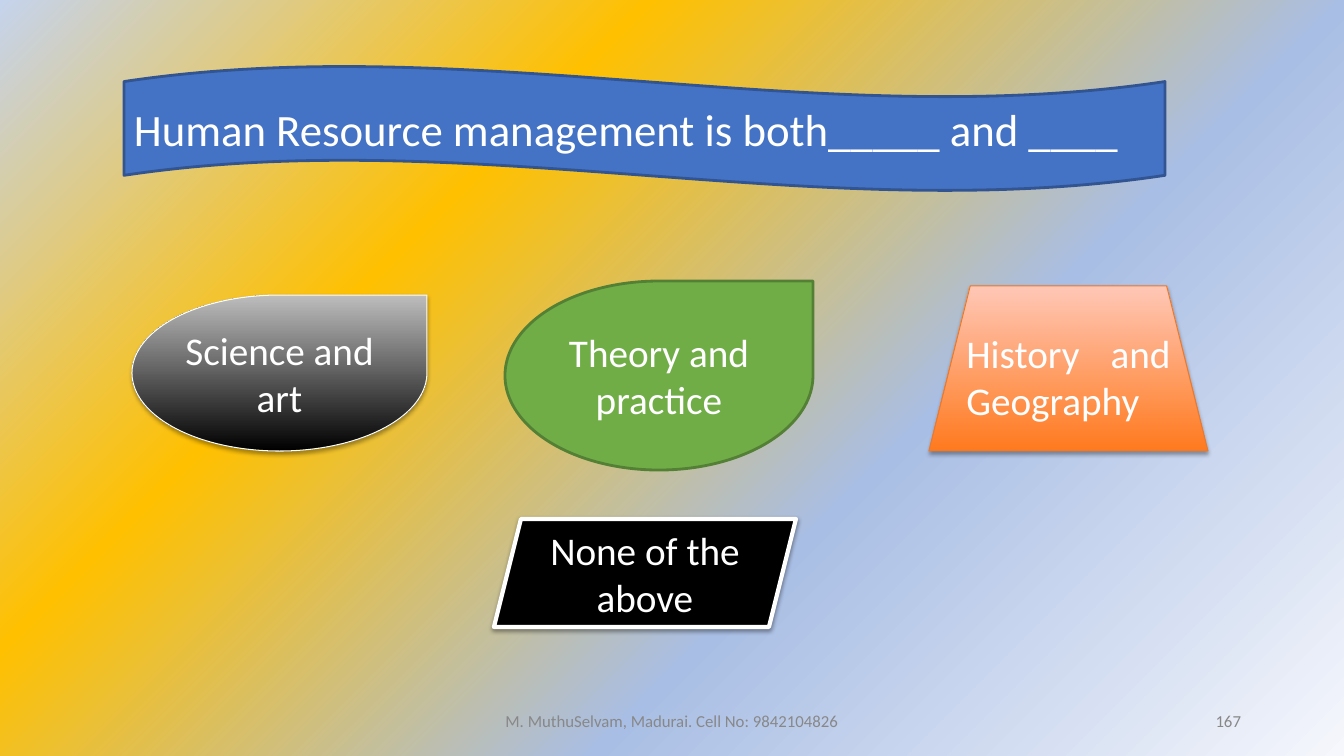
from lxml.etree import SubElement
from pptx import Presentation
from pptx.dml.color import RGBColor
from pptx.enum.shapes import MSO_SHAPE as Shape
from pptx.enum.text import MSO_ANCHOR as Anchor, PP_ALIGN as Align
from pptx.oxml.ns import qn
from pptx.util import Emu, Pt

EMU_PER_PX = 12192000 / 1344
FONT = "Calibri"
WHITE, BLACK, GREY = "FFFFFF", "000000", "888888"
BACKGROUND_STOPS = [(0, "F5F7FC"), (36, "A9BEE4"), (69, "FFC000"), (100, "C5D3ED")]


def px(length):
    """Turn pixels into EMU."""
    return Emu(round(length * EMU_PER_PX))


def color(hex_code):
    """Turn a hex string into a colour."""
    return RGBColor.from_string(hex_code)


def add_node(parent, tag, **attributes):
    """Append a drawing element with the given attributes."""
    return SubElement(parent, qn(tag), {key: str(value) for key, value in attributes.items()})


def set_gradient(fill, holder, stops):
    """Give a fill its gradient stops and return the bare gradient element."""
    fill.gradient()
    gradient = next(holder.iter(qn("a:gradFill")))
    for child in list(gradient):
        gradient.remove(child)
    stop_list = add_node(gradient, "a:gsLst")
    for position, hex_code in stops:
        stop = add_node(stop_list, "a:gs", pos=position * 1000)
        add_node(stop, "a:srgbClr", val=hex_code)
    return gradient


def paint_background(slide):
    """Spread the background gradient out from the bottom right corner."""
    background = slide.background
    gradient = set_gradient(background.fill, slide.element, BACKGROUND_STOPS)
    path_node = add_node(gradient, "a:path", path="circle")
    add_node(path_node, "a:fillToRect", l=100000, t=100000)
    add_node(gradient, "a:tileRect", r=-100000, b=-100000)


def add_shadow(shape, opacity, distance):
    """Drop a soft black shadow below a shape."""
    effects = shape.element.spPr.find(qn("a:effectLst"))
    shadow = add_node(effects, "a:outerShdw", blurRad=Pt(3.1), dist=Pt(distance),
                      dir=5400000, rotWithShape=0)
    black = add_node(shadow, "a:srgbClr", val=BLACK)
    add_node(black, "a:alpha", val=opacity * 1000)


def write_text(shape, text, size, hex_code, align):
    """Write one paragraph, centred vertically."""
    frame = shape.text_frame
    frame.word_wrap = True
    frame.vertical_anchor = Anchor.MIDDLE
    paragraph = frame.paragraphs[0]
    paragraph.alignment = align
    run = paragraph.add_run()
    run.text = text
    run.font.name = FONT
    run.font.size = Pt(size)
    run.font.color.rgb = color(hex_code)


def add_card(slide, kind, box, fill, line, text, size=28, align=Align.CENTER, shadow=None):
    """Add a labelled shape with a plain fill or a list of upward gradient stops."""
    shape = slide.shapes.add_shape(kind, *map(px, box))
    shape.shadow.inherit = False
    if isinstance(fill, str):
        shape.fill.solid()
        shape.fill.fore_color.rgb = color(fill)
    else:
        gradient = set_gradient(shape.fill, shape.element, fill)
        add_node(gradient, "a:lin", ang=16200000, scaled=0)
    line_color, line_width = line
    shape.line.color.rgb = color(line_color)
    shape.line.width = Pt(line_width)
    if shadow:
        add_shadow(shape, *shadow)
    write_text(shape, text, size, WHITE, align)


def add_footer(slide, left, width, text, align):
    """Add a small grey text on the footer line."""
    box = slide.shapes.add_textbox(px(left), px(701), px(width), px(40))
    write_text(box, text, 12, GREY, align)


def main():
    """Build the quiz slide."""
    presentation = Presentation()
    presentation.slide_width, presentation.slide_height = px(1344), px(756)
    slide = presentation.slides.add_slide(presentation.slide_layouts[6])
    paint_background(slide)
    add_card(slide, Shape.WAVE, (124, 66, 1041, 125), "4472C4", ("325491", 2),
             "Human Resource management is both_____ and ____", 32, Align.JUSTIFY)
    add_card(slide, Shape.TEAR, (132, 295, 295, 156), [(0, BLACK), (100, "BDBDBD")],
             (WHITE, 0.75), "Science and art", shadow=(35, 1.8))
    add_card(slide, Shape.TRAPEZOID, (929, 286, 279, 165), [(0, "FF7A1F"), (100, "FFC7B6")],
             ("EC792B", 0.75), "History and Geography", align=Align.JUSTIFY, shadow=(35, 1.8))
    add_card(slide, Shape.PARALLELOGRAM, (494, 519, 302, 108), BLACK,
             (WHITE, 3), "None of the above", shadow=(38, 1.6))
    add_card(slide, Shape.TEAR, (505, 281, 308, 189), "70AD47", ("538035", 2),
             "Theory and practice")
    add_footer(slide, 445, 454, "M. MuthuSelvam, Madurai. Cell No: 9842104826", Align.CENTER)
    add_footer(slide, 949, 302, "167", Align.RIGHT)
    presentation.save("out.pptx")


if __name__ == "__main__":
    main()
